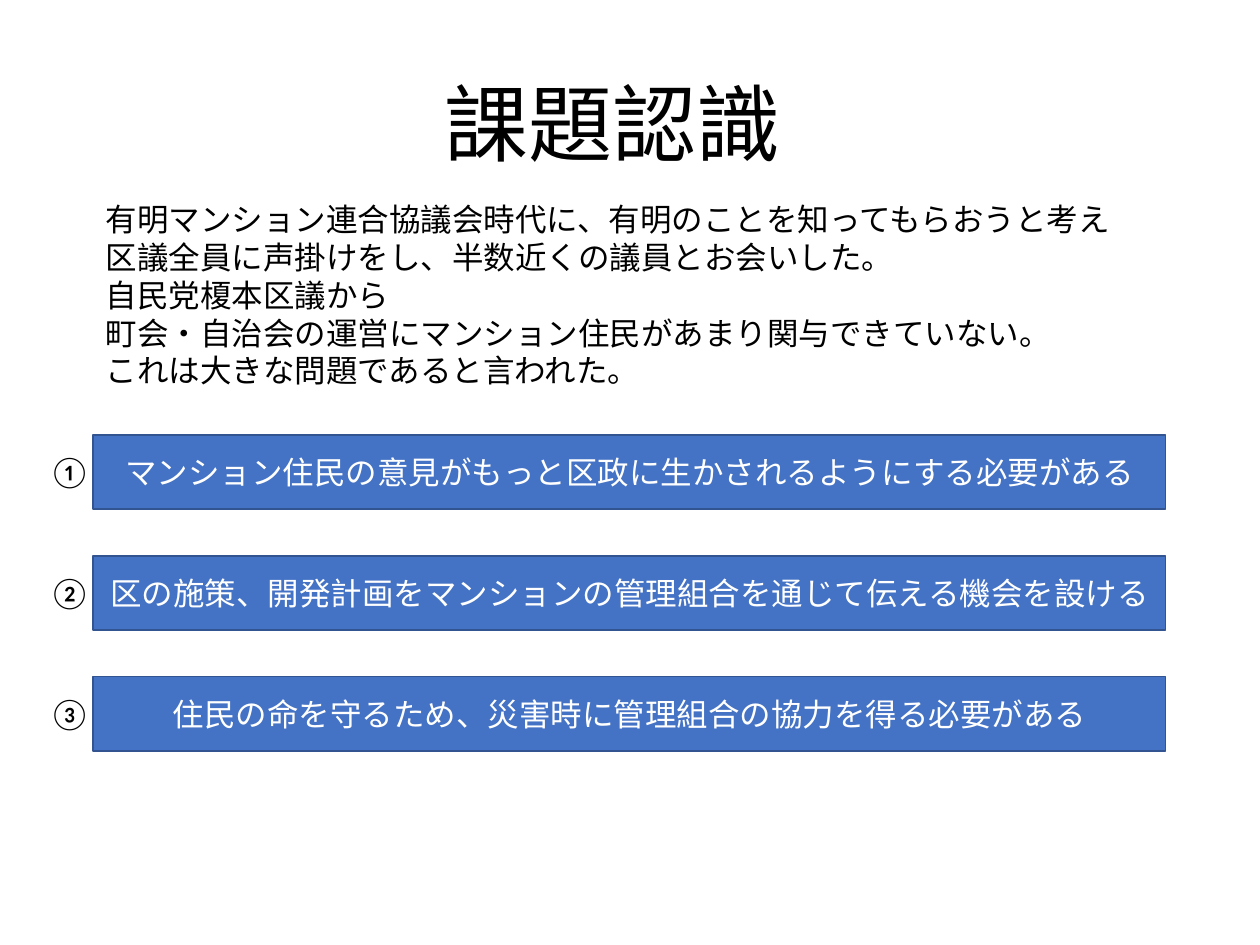
from pptx import Presentation
from pptx.dml.color import RGBColor
from pptx.enum.shapes import MSO_SHAPE as Kind
from pptx.enum.text import MSO_ANCHOR as Anchor, MSO_AUTO_SIZE as Fit, PP_ALIGN as Align
from pptx.util import Inches, Pt

INTRO = """有明マンション連合協議会時代に、有明のことを知ってもらおうと考え
区議全員に声掛けをし、半数近くの議員とお会いした。
自民党榎本区議から
町会・自治会の運営にマンション住民があまり関与できていない。
これは大きな問題であると言われた。"""

POINTS = [
    ("①", "マンション住民の意見がもっと区政に生かされるようにする必要がある"),
    ("②", "区の施策、開発計画をマンションの管理組合を通じて伝える機会を設ける"),
    ("③", "住民の命を守るため、災害時に管理組合の協力を得る必要がある"),
]
LEFT, WIDTH = 0.74, 8.51
TOP, STEP, HEIGHT = 3.45, 0.96, 0.59


def color(code):
    """Turn a hex string into a colour."""
    return RGBColor.from_string(code)


def write(shape, text, size=18, ink="000000", align=Align.LEFT, anchor=Anchor.TOP):
    """Fill a shape with formatted text."""
    frame = shape.text_frame
    frame.text = text
    frame.word_wrap = True
    frame.vertical_anchor = anchor
    for para in frame.paragraphs:
        para.alignment = align
        for run in para.runs:
            run.font.name = "Calibri"
            run.font.size = Pt(size)
            run.font.color.rgb = color(ink)


def add_title(slide, text):
    """Place the slide title."""
    title = slide.shapes.title
    title.left, title.top = Inches(3.43), Inches(0.52)
    title.width, title.height = Inches(3.15), Inches(0.91)
    write(title, text, 48)
    title.text_frame.auto_size = Fit.SHAPE_TO_FIT_TEXT


def add_label(slide, text, left, top, width, height):
    """Add a text box that grows with its text."""
    box = slide.shapes.add_textbox(Inches(left), Inches(top), Inches(width), Inches(height))
    write(box, text)
    box.text_frame.auto_size = Fit.SHAPE_TO_FIT_TEXT


def add_bar(slide, text, top):
    """Add a blue bar with centred white text."""
    bar = slide.shapes.add_shape(
        Kind.RECTANGLE, Inches(LEFT), Inches(top), Inches(WIDTH), Inches(HEIGHT))
    bar.shadow.inherit = False
    bar.fill.solid()
    bar.fill.fore_color.rgb = color("4472C4")
    bar.line.color.rgb = color("325491")
    bar.line.width = Pt(1)
    write(bar, text, ink="FFFFFF", align=Align.CENTER, anchor=Anchor.MIDDLE)


def main():
    """Build and save the slide."""
    deck = Presentation()
    deck.slide_width, deck.slide_height = Inches(10), Inches(7.5)
    slide = deck.slides.add_slide(deck.slide_layouts.get_by_name("Title Only"))
    add_title(slide, "課題認識")
    add_label(slide, INTRO, LEFT, 1.54, WIDTH, 1.62)
    for i, (mark, text) in enumerate(POINTS):
        top = TOP + i * STEP
        add_bar(slide, text, top)
        add_label(slide, mark, 0.29, top + 0.09, 0.46, 0.4)
    deck.save("out.pptx")


if __name__ == "__main__":
    main()
